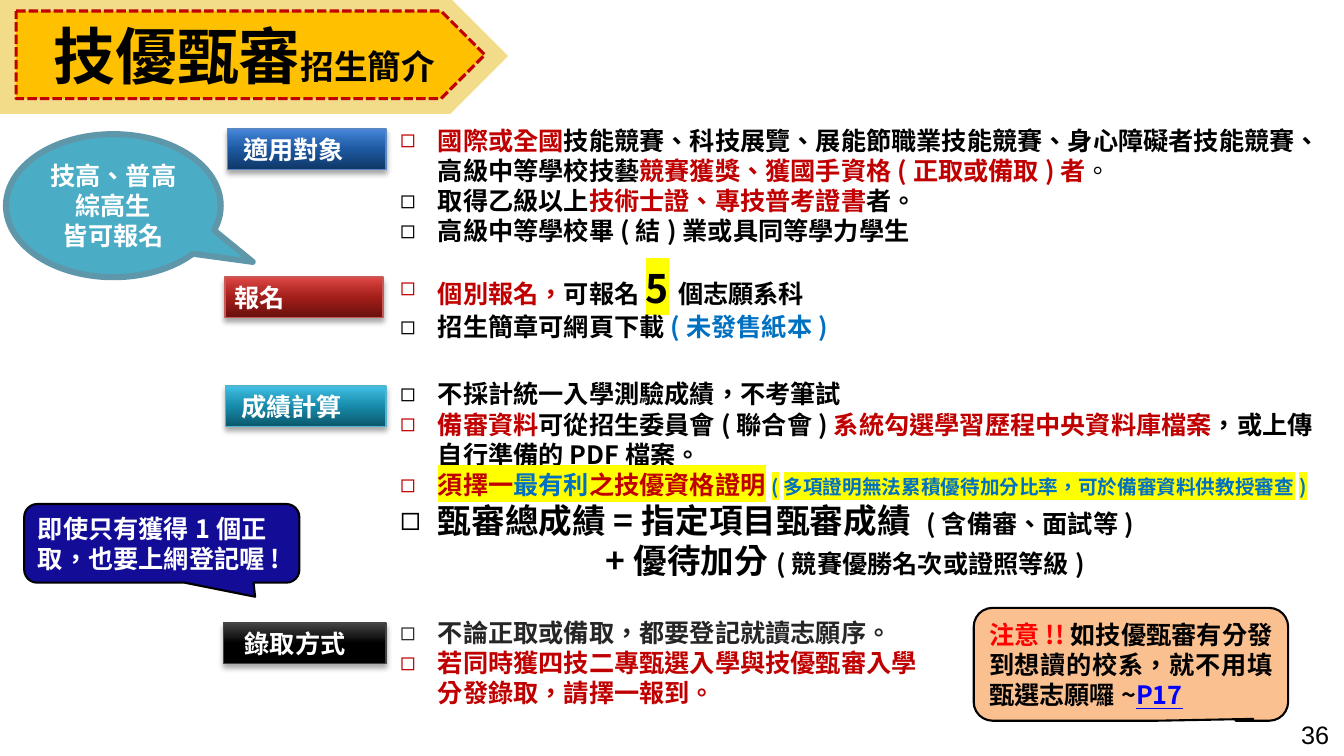
"""Build the admission briefing slide for skill-excellence candidates."""
from lxml import etree
from pptx import Presentation
from pptx.dml.color import RGBColor
from pptx.enum import dml, shapes, text
from pptx.oxml import ns
from pptx.util import Pt

FONT = "Noto Sans CJK SC"
BLACK, WHITE, RED, BLUE, YELLOW = "000000", "FFFFFF", "C00000", "0070C0", "FFFF00"
KIND, ALIGN = shapes.MSO_SHAPE, text.PP_ALIGN


def rgb(code):
    """Turn a hex string into a colour."""
    return RGBColor.from_string(code)


def write(tf, paras, align=ALIGN.LEFT, font=FONT):
    """Fill a text frame with (space before, runs) paragraphs."""
    tf.word_wrap, tf.auto_size = True, text.MSO_AUTO_SIZE.NONE
    for i, (before, runs) in enumerate(paras):
        p = tf.add_paragraph() if i else tf.paragraphs[0]
        layout = {"alignment": align, "line_spacing": 1.0, "space_before": Pt(before)}
        for key, value in layout.items():
            setattr(p, key, value)
        for words, colour, *extra in runs:
            style = {"size": Pt(18), "bold": True, **(extra[0] if extra else {})}
            mark = style.pop("mark", None)
            for n, part in enumerate(words.split("\n")):
                if n:
                    p.add_line_break()
                r = p.add_run()
                r.text = part
                r.font.color.rgb = rgb(colour)
                rPr = r._r.get_or_add_rPr()
                rPr.set("lang", "zh-TW")
                if mark:
                    hl = etree.SubElement(rPr, ns.qn("a:highlight"))
                    etree.SubElement(hl, ns.qn("a:srgbClr"), val=mark)
                r.font.name = font
                etree.SubElement(rPr, ns.qn("a:ea"), typeface=font)
                for key, value in style.items():
                    setattr(r.font, key, value)


prs = Presentation()
prs.slide_width, prs.slide_height = Pt(960), Pt(540)
s = prs.slides.add_slide(prs.slide_layouts[1])
title, body = s.placeholders

big, small = {"size": Pt(24)}, {"size": Pt(14), "mark": YELLOW}
marked = {"mark": YELLOW}
rules = [
    (0, [("國際或全國", RED),
         ("技能競賽、科技展覽、展能節職業技能競賽、身心障礙者技能競賽、高級中等學校技藝", BLACK),
         ("競賽獲獎、獲國手資格(正取或備取)者", RED), ("。", BLACK, {"bold": False})]),
    (0, [("取得乙級以上", BLACK), ("技術士證、專技普考證書", RED), ("者。", BLACK)]),
    (0, [("高級中等學校畢(結)業或具同等學力學生", BLACK)]),
    (13.2, [("個別報名，", RED), ("可報名", BLACK),
            ("5", BLACK, {"size": Pt(28), "mark": YELLOW}), ("個志願系科", BLACK)]),
    (0, [("招生簡章可網頁下載", BLACK), ("(未發售紙本)", BLUE)]),
    (26.4, [("不採計統一入學測驗成績，不考筆試", BLACK)]),
    (0, [("備審資料", RED), ("可從招生委員會(聯合會)", BLACK),
         ("系統勾選學習歷程中央資料庫檔案", RED), ("，或上傳自行準備的PDF檔案。", BLACK)]),
    (0, [("須擇一", RED, marked), ("最有利", BLUE, marked), ("之技優資格證明", RED, marked),
         ("(多項證明無法累積優待加分比率，可於備審資料供教授審查)", BLUE, small)]),
    (0, [("甄審總成績=指定項目甄審成績 ", BLACK, big), ("(含備審、面試等)", BLACK)]),
    (0, [("+優待加分", BLACK, big), ("(競賽優勝名次或證照等級)", BLACK)]),
    (26.4, [("不論正取或備取，都要登記就讀志願序。", "262626")]),
    (0, [("若同時獲四技二專甄選入學與技優甄審入學\n分發錄取，請擇一報到。", RED)]),
]
body.left, body.top, body.width, body.height = Pt(278.6), Pt(85.7), Pt(667), Pt(446.4)
write(body.text_frame, rules)
body.text_frame.vertical_anchor = text.MSO_ANCHOR.TOP
for p in body.text_frame.paragraphs:
    pPr = p._p.get_or_add_pPr()
    sum_line = p.text.startswith("+")
    pPr.set("marL", str(Pt(147 if sum_line else 27)))
    pPr.set("indent", str(Pt(0 if sum_line else -27)))
    if sum_line:
        etree.SubElement(pPr, ns.qn("a:buNone"))
    else:
        etree.SubElement(pPr, ns.qn("a:buChar"), char="◻")

panels = [
    (KIND.PENTAGON, (0, -1.4, 363, 82.8), [], "F3DC89", None, 0, [], None),
    (KIND.PENTAGON, (11.5, 7.9, 334.8, 62.6), [], "FFC000", RED, 2.25, [], None),
    (KIND.OVAL_CALLOUT, (4.3, 95.8, 153.4, 102.2), [0.649, 0.393], "4BACC6", "5F97AA", 4.33,
     [(0, [("技高、普高", WHITE)]), (0, [("綜高生\n皆可報名", WHITE)])], ALIGN.CENTER),
    (KIND.ROUNDED_RECTANGULAR_CALLOUT, (17.3, 360, 196.6, 56.2), [0.339, 0.679, 0.167],
     "130C96", BLACK, 1.5, [(0, [("即使只有獲得1個正取，也要上網登記喔!", WHITE)])], ALIGN.LEFT),
    (KIND.ROUNDED_RECTANGULAR_CALLOUT, (695.5, 434.2, 224.6, 80.6), [0.389, 0.484, 0.167],
     "FAC090", BLACK, 1.5,
     [(0, [("注意!!", "FF0000"), ("如技優甄審有分發到想讀的校系，就不用填甄選志願囉~", BLACK),
           ("P17", "0000FF", {"underline": True})])], ALIGN.JUSTIFY),
]
for kind, box, adjust, fill, edge, weight, paras, align in panels:
    sp = s.shapes.add_shape(kind, *map(Pt, box))
    sp.shadow.inherit = False
    for i, value in enumerate(adjust):
        sp.adjustments[i] = value
    sp.fill.solid()
    sp.fill.fore_color.rgb = rgb(fill)
    if edge:
        sp.line.color.rgb = rgb(edge)
        sp.line.width = Pt(weight)
    else:
        sp.line.fill.background()
    if edge == RED:
        sp.line.dash_style = dml.MSO_LINE.SQUARE_DOT
    write(sp.text_frame, paras, align)

title.left, title.top, title.width, title.height = Pt(11.5), Pt(7.9), Pt(334.8), Pt(62.6)
write(title.text_frame, [(0, [("技優甄審", BLACK, {"size": Pt(44)}), ("招生簡介", BLACK, big)])])
title.text_frame.margin_left = Pt(27)
title.text_frame.vertical_anchor = text.MSO_ANCHOR.MIDDLE
s.shapes.element.append(title.element)

labels = [
    ("成績計算", 161.3, 275.8, 114.5, 11, "54B3CF", ["0B586C", "178BAA", "279FC0", "41C1E6"]),
    ("報名", 160.6, 198, 113, 7.2, "C95956", ["68100E", "A41E1A", "B92E2A", "DF4845"]),
    ("適用對象", 162.7, 92.2, 113, 11, "5887C6", ["0F3766", "1D59A1", "2D6AB6", "4786DB"]),
    ("錄取方式", 159.8, 445, 115.9, 15, "444444", ["000000", "000000", "1D1D1D", "424242"]),
]
for words, left, top, width, inset, edge, stops in labels:
    sp = s.shapes.add_shape(KIND.RECTANGLE, Pt(left), Pt(top), Pt(width), Pt(28.8))
    sp.line.color.rgb = rgb(edge)
    sp.line.width = Pt(1)
    sp.fill.gradient()
    sp.fill.gradient_angle = 90
    gsLst = sp.element.spPr.find(".//" + ns.qn("a:gsLst"))
    for gs in list(gsLst):
        gsLst.remove(gs)
    for pos, colour in zip((0, 50, 70, 100), stops):
        gs = etree.SubElement(gsLst, ns.qn("a:gs"), pos=str(pos * 1000))
        etree.SubElement(gs, ns.qn("a:srgbClr"), val=colour)
    sp.shadow.inherit = False
    effects = sp.element.spPr.find(ns.qn("a:effectLst"))
    shadow = etree.SubElement(effects, ns.qn("a:outerShdw"), blurRad=str(Pt(4)),
                              dist=str(Pt(3)), dir="5400000", rotWithShape="0")
    tone = etree.SubElement(shadow, ns.qn("a:srgbClr"), val=BLACK)
    etree.SubElement(tone, ns.qn("a:alpha"), val="35000")
    write(sp.text_frame, [(0, [(words, WHITE)])], ALIGN.JUSTIFY)
    sp.text_frame.margin_left = Pt(inset)

number = s.shapes.add_textbox(Pt(922.3), Pt(510.5), Pt(37.4), Pt(28.8))
write(number.text_frame, [(0, [("36", BLACK, {"bold": False})])], font="Arial")

prs.save("out.pptx")
